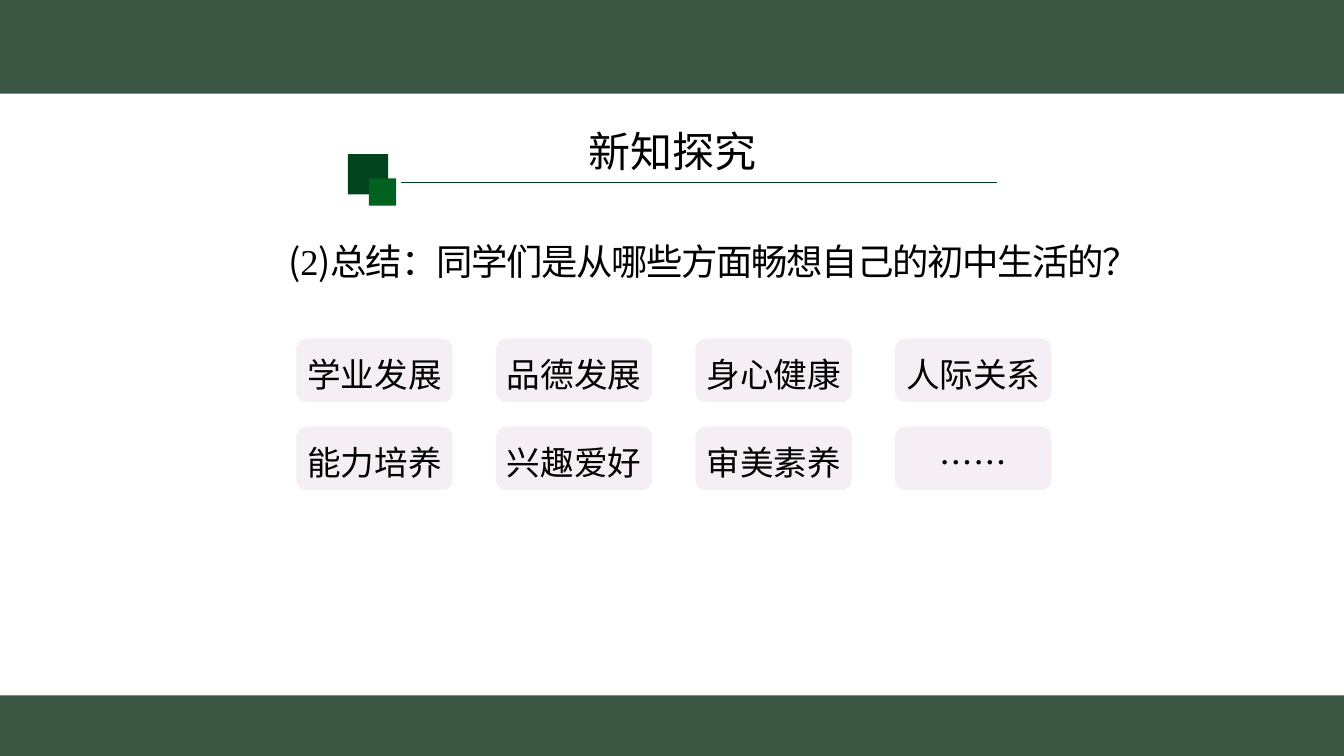
from dataclasses import dataclass

from lxml.etree import SubElement
from pptx import Presentation
from pptx.dml.color import RGBColor
from pptx.enum.shapes import MSO_CONNECTOR, MSO_SHAPE
from pptx.enum.text import MSO_ANCHOR, PP_ALIGN
from pptx.oxml.ns import qn
from pptx.util import Inches, Pt

COLORS = {
    "band": "3B5643",
    "dark": "01431D",
    "green": "01621F",
    "card": "F5EEF5",
    "text": "000000",
}
CHINESE_FONT = "Noto Sans CJK SC"
NUMBER_FONT = "Times New Roman"
TOPICS = [
    ["学业发展", "品德发展", "身心健康", "人际关系"],
    ["能力培养", "兴趣爱好", "审美素养", "……"],
]


@dataclass(frozen=True)
class Box:
    """Left, top, width and height in percent of the slide."""

    left: float
    top: float
    width: float
    height: float


@dataclass(frozen=True)
class Block:
    box: Box
    color: str


@dataclass(frozen=True)
class Piece:
    text: str
    font: str = CHINESE_FONT
    spacing: int = 0


BLOCKS = [
    Block(Box(0, 0, 100, 12.4), "band"),
    Block(Box(0, 92, 100, 8), "band"),
    Block(Box(25.88, 20.4, 3, 5.33), "dark"),
    Block(Box(27.45, 23.6, 2.03, 3.6), "green"),
]
FIRST_CARD = Box(22.05, 44.8, 11.63, 8.4)
COLUMN_STEP, ROW_STEP = 14.85, 11.64
TITLE_BOX = Box(16.35, 16.67, 67.35, 8.4)
QUESTION_BOX = Box(20.7, 27.47, 68.25, 12.53)
QUESTION = [
    Piece("(", spacing=-50),
    Piece("2", NUMBER_FONT, -50),
    Piece(")", spacing=-50),
    Piece("总结：同学们是从哪些方面畅想自己的初中生活的？", spacing=-100),
]

presentation = Presentation()
presentation.slide_width = Inches(13.33)
presentation.slide_height = Inches(7.5)
slide = presentation.slides.add_slide(presentation.slide_layouts[6])


def across(share: float) -> int:
    return round(presentation.slide_width * share / 100)


def down(share: float) -> int:
    return round(presentation.slide_height * share / 100)


def place(box: Box) -> tuple[int, int, int, int]:
    return across(box.left), down(box.top), across(box.width), down(box.height)


def color(name: str) -> RGBColor:
    return RGBColor.from_string(COLORS[name])


def add_block(block: Block, kind=MSO_SHAPE.RECTANGLE):
    shape = slide.shapes.add_shape(kind, *place(block.box))
    shape.shadow.inherit = False
    shape.fill.solid()
    shape.fill.fore_color.rgb = color(block.color)
    shape.line.fill.background()
    return shape


def write(shape, pieces: list[Piece], size: int, line_spacing: float,
          align: PP_ALIGN = PP_ALIGN.CENTER) -> None:
    paragraph = shape.text_frame.paragraphs[0]
    paragraph.alignment = align
    paragraph.line_spacing = line_spacing
    paragraph.font.size = Pt(size)
    paragraph.font.color.rgb = color("text")
    for piece in pieces:
        run = paragraph.add_run()
        run.text = piece.text
        run.font.name = piece.font
        properties = run.font._element
        SubElement(properties, qn("a:ea"), typeface=CHINESE_FONT)
        if piece.spacing:
            properties.set("spc", str(piece.spacing))


def add_text_box(box: Box):
    text_box = slide.shapes.add_textbox(*place(box))
    text_box.text_frame.word_wrap = True
    return text_box


def add_card(topic: str, column: int, row: int) -> None:
    box = Box(FIRST_CARD.left + column * COLUMN_STEP,
              FIRST_CARD.top + row * ROW_STEP,
              FIRST_CARD.width, FIRST_CARD.height)
    card = add_block(Block(box, "card"), MSO_SHAPE.ROUNDED_RECTANGLE)
    frame = card.text_frame
    frame.word_wrap = False
    frame.vertical_anchor = MSO_ANCHOR.MIDDLE
    frame.margin_top = frame.margin_bottom = 0
    write(card, [Piece(topic)], 24, 1.2)


def add_title_rule() -> None:
    rule = slide.shapes.add_connector(
        MSO_CONNECTOR.STRAIGHT,
        across(29.85), down(24.13), across(74.18), down(24.13))
    rule.line.color.rgb = color("dark")
    rule.line.width = Pt(1)
    SubElement(rule._element.spPr, qn("a:effectLst"))


def main() -> None:
    for block in BLOCKS:
        add_block(block)
    add_title_rule()
    write(add_text_box(TITLE_BOX), [Piece("新知探究")], 30, 0.9)
    write(add_text_box(QUESTION_BOX), QUESTION, 26, 1.6, PP_ALIGN.LEFT)
    for row, topics in enumerate(TOPICS):
        for column, topic in enumerate(topics):
            add_card(topic, column, row)
    presentation.save("out.pptx")


if __name__ == "__main__":
    main()
